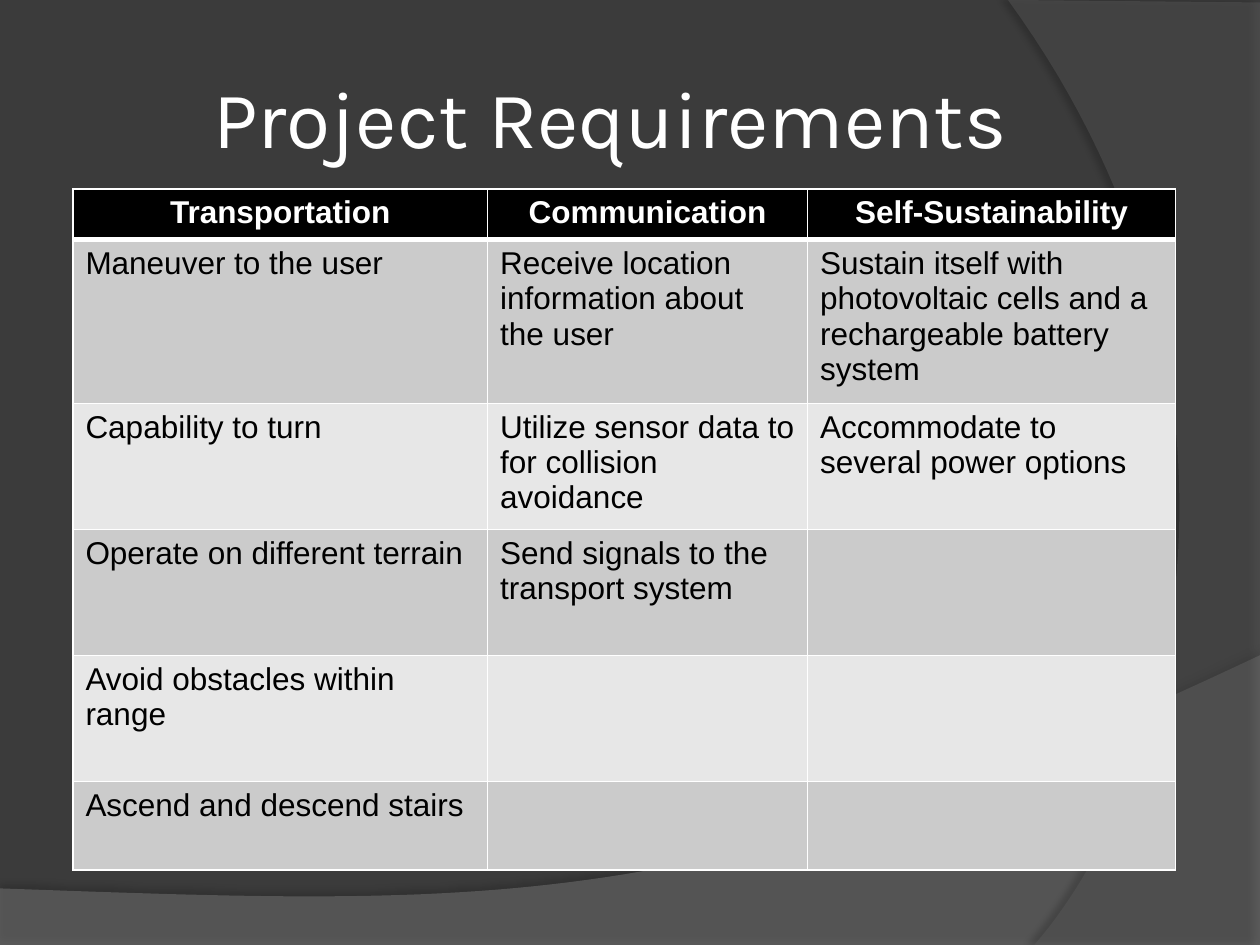
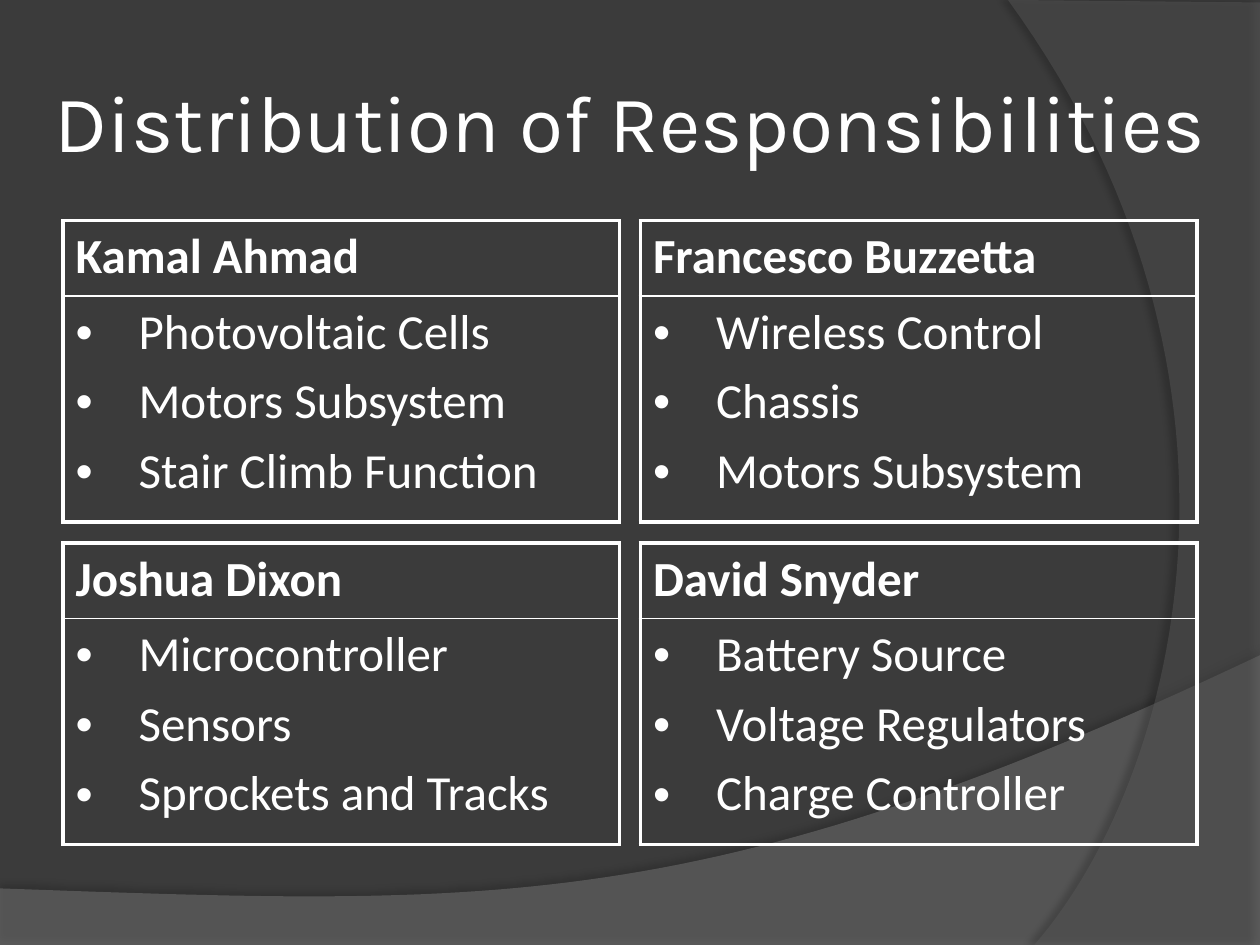
from dataclasses import dataclass

from lxml.etree import SubElement
from pptx import Presentation
from pptx.dml.color import RGBColor
from pptx.enum.text import MSO_ANCHOR, PP_ALIGN
from pptx.oxml.ns import qn
from pptx.util import Cm, Pt

BACKGROUND, WHITE, BLACK = "3B3B3B", "FFFFFF", "000000"
ROW_FILLS = ("CBCBCB", "E7E7E7")
TITLE_FONT, TABLE_FONT, CARD_FONT = "Karla", "Arial", "Calibri"
SLIDE_WIDTH, SLIDE_HEIGHT = 25.4, 19.05
CURVE_STEPS = 60

Point = tuple[float, float]


@dataclass
class Band:
    """Straight corners, then a Bezier curve from the last corner to the first or to curve_end."""
    corners: list[Point]
    controls: tuple[Point, Point]
    curve_end: Point
    color: str
    opacity: int
    shadow_opacity: int
    shadow_distance: float
    shadow_angle: int


@dataclass
class Borders:
    """Line widths in points."""
    left: float
    right: float
    top: float
    bottom: float


@dataclass
class Member:
    name: str
    duties: list[str]


BANDS = [
    Band([(0, 17.91), (0, SLIDE_HEIGHT), (SLIDE_WIDTH, SLIDE_HEIGHT), (SLIDE_WIDTH, 13.21)],
         ((14.2, 18.52), (9.93, 18.26)), (0, 17.91), "7F7F7F", 45, 35, 3.5, 270),
    Band([(SLIDE_WIDTH, 0.05), (SLIDE_WIDTH, SLIDE_HEIGHT), (20.85, SLIDE_HEIGHT)],
         ((23.75, 15.72), (25.86, 7.62)), (20.32, 0), "5E5E5E", 40, 45, 4, 180),
]

REQUIREMENTS = [
    ["Transportation", "Communication", "Self-Sustainability"],
    ["Maneuver to the user", "Receive location information about the user",
     "Sustain itself with photovoltaic cells and a rechargeable battery system"],
    ["Capability to turn", "Utilize sensor data to for collision avoidance",
     "Accommodate to several power options"],
    ["Operate on different terrain", "Send signals to the transport system", ""],
    ["Avoid obstacles within range", "", ""],
    ["Ascend and descend stairs", "", ""],
]

MEMBERS = [
    Member("Kamal Ahmad", ["Photovoltaic Cells", "Motors Subsystem", "Stair Climb Function"]),
    Member("Francesco Buzzetta", ["Wireless Control", "Chassis", "Motors Subsystem"]),
    Member("Joshua Dixon", ["Microcontroller", "Sensors", "Sprockets and Tracks"]),
    Member("David Snyder", ["Battery Source", "Voltage Regulators", "Charge Controller"]),
]


def rgb(color: str) -> RGBColor:
    return RGBColor.from_string(color)


def add_alpha(color_element, percent: int) -> None:
    SubElement(color_element, qn("a:alpha"), val=str(percent * 1000))


def curve_points(start: Point, controls: tuple[Point, Point], end: Point) -> list[Point]:
    """Sample a cubic Bezier curve, leaving out its start."""
    first, second = controls
    points = []
    for step in range(1, CURVE_STEPS + 1):
        t = step / CURVE_STEPS
        weights = ((1 - t) ** 3, 3 * t * (1 - t) ** 2, 3 * t ** 2 * (1 - t), t ** 3)
        nodes = (start, first, second, end)
        points.append(tuple(sum(w * node[axis] for w, node in zip(weights, nodes))
                            for axis in (0, 1)))
    return points


def draw_band(page, band: Band) -> None:
    outline = band.corners + curve_points(band.corners[-1], band.controls, band.curve_end)
    vertices = [(Cm(x), Cm(y)) for x, y in outline]
    builder = page.shapes.build_freeform(*vertices[0])
    builder.add_line_segments(vertices[1:], close=True)
    shape = builder.convert_to_shape()
    shape.line.fill.background()
    shape.fill.solid()
    shape.fill.fore_color.rgb = rgb(band.color)
    properties = shape._element.spPr
    add_alpha(properties.find(qn("a:solidFill")).find(qn("a:srgbClr")), band.opacity)
    shape.shadow.inherit = False
    shadow = SubElement(properties.find(qn("a:effectLst")), qn("a:outerShdw"),
                        blurRad=str(Pt(4)), dist=str(Pt(band.shadow_distance)),
                        dir=str(band.shadow_angle * 60000), algn="ctr", rotWithShape="0")
    add_alpha(SubElement(shadow, qn("a:srgbClr"), val=BLACK), band.shadow_opacity)


def add_span(para, text: str, font: str, size: float, color: str, bold: bool = False) -> None:
    span = para.add_run()
    span.text = text
    span.font.name = font
    span.font.size = Pt(size)
    span.font.bold = bold
    span.font.color.rgb = rgb(color)


def add_page(deck, title: str, left: float, top: float, width: float):
    """Add a slide with the shared background, bands and title."""
    page = deck.slides.add_slide(deck.slide_layouts[6])
    page.background.fill.solid()
    page.background.fill.fore_color.rgb = rgb(BACKGROUND)
    for band in BANDS:
        draw_band(page, band)
    box = page.shapes.add_textbox(Cm(left), Cm(top), Cm(width), Cm(3.18))
    frame = box.text_frame
    frame.word_wrap = True
    frame.vertical_anchor = MSO_ANCHOR.MIDDLE
    frame.margin_left = frame.margin_right = Cm(0.13)
    frame.margin_top = frame.margin_bottom = Cm(0.13)
    para = frame.paragraphs[0]
    para.alignment = PP_ALIGN.CENTER
    add_span(para, title, TITLE_FONT, 46, WHITE)
    return page


def add_plain_table(page, left: float, top: float, widths: list[float], heights: list[float]):
    frame = page.shapes.add_table(len(heights), len(widths), Cm(left), Cm(top),
                                  Cm(sum(widths)), Cm(sum(heights)))
    table = frame.table
    table.first_row = table.horz_banding = False
    for column, width in zip(table.columns, widths):
        column.width = Cm(width)
    for row, height in zip(table.rows, heights):
        row.height = Cm(height)
    return table


def style_cell(cell, borders: Borders, fill: str | None = None) -> None:
    properties = cell._tc.get_or_add_tcPr()
    sides = {"L": borders.left, "R": borders.right, "T": borders.top, "B": borders.bottom}
    for side, width in sides.items():
        line = SubElement(properties, qn(f"a:ln{side}"), w=str(Pt(width)))
        SubElement(SubElement(line, qn("a:solidFill")), qn("a:srgbClr"), val=WHITE)
    if fill:
        cell.fill.solid()
        cell.fill.fore_color.rgb = rgb(fill)
    else:
        cell.fill.background()


def add_bullet(para) -> None:
    properties = para._p.get_or_add_pPr()
    properties.set("marL", str(Cm(1.27)))
    properties.set("indent", str(-Cm(1.27)))
    SubElement(properties, qn("a:buFont"), typeface="Arial")
    SubElement(properties, qn("a:buChar"), char="•")


def draw_requirements(page) -> None:
    table = add_plain_table(page, 1.47, 3.81, [8.36, 6.45, 7.42],
                            [1.02, 3.3, 2.54, 2.54, 2.54, 1.78])
    for row, texts in enumerate(REQUIREMENTS):
        header = row == 0
        borders = Borders(1, 1, top=3 if row == 1 else 1, bottom=3 if header else 1)
        fill = BLACK if header else ROW_FILLS[(row - 1) % 2]
        for column, text in enumerate(texts):
            cell = table.cell(row, column)
            style_cell(cell, borders, fill)
            if text:
                para = cell.text_frame.paragraphs[0]
                para.alignment = PP_ALIGN.CENTER if header else PP_ALIGN.LEFT
                add_span(para, text, TABLE_FONT, 18, WHITE if header else BLACK, header)


def draw_member(page, member: Member, left: float, top: float) -> None:
    table = add_plain_table(page, left, top, [11.22], [1.52, 4.55])
    name_cell, duties_cell = table.cell(0, 0), table.cell(1, 0)
    style_cell(name_cell, Borders(2.25, 2.25, 2.25, 1))
    style_cell(duties_cell, Borders(2.25, 2.25, 1, 2.25))
    for cell, texts in ((name_cell, [member.name]), (duties_cell, member.duties)):
        frame = cell.text_frame
        for index, text in enumerate(texts):
            para = frame.add_paragraph() if index else frame.paragraphs[0]
            para.space_before = Pt(5.6)
            if cell is duties_cell:
                add_bullet(para)
            add_span(para, text, CARD_FONT, 28, WHITE, bold=cell is name_cell)


def main() -> None:
    deck = Presentation()
    deck.slide_width, deck.slide_height = Cm(SLIDE_WIDTH), Cm(SLIDE_HEIGHT)
    draw_requirements(add_page(deck, "Project Requirements ", 1.27, 0.76, 22.43))
    page = add_page(deck, "Distribution of Responsibilities", 0.84, 0.84, 23.7)
    for index, member in enumerate(MEMBERS):
        row, column = divmod(index, 2)
        draw_member(page, member, 1.27 + column * 11.64, 4.45 + row * 6.5)
    deck.save("out.pptx")


if __name__ == "__main__":
    main()
